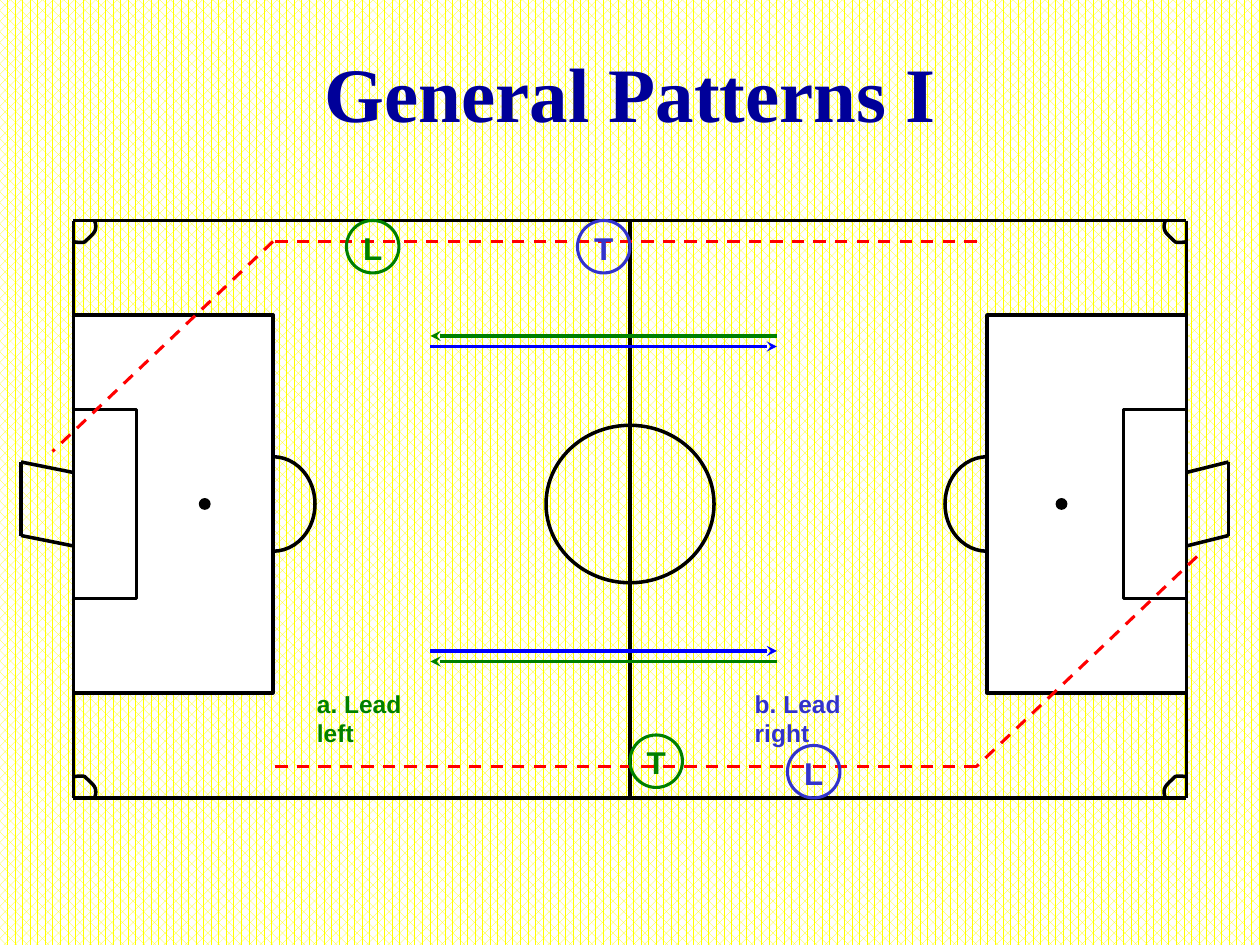
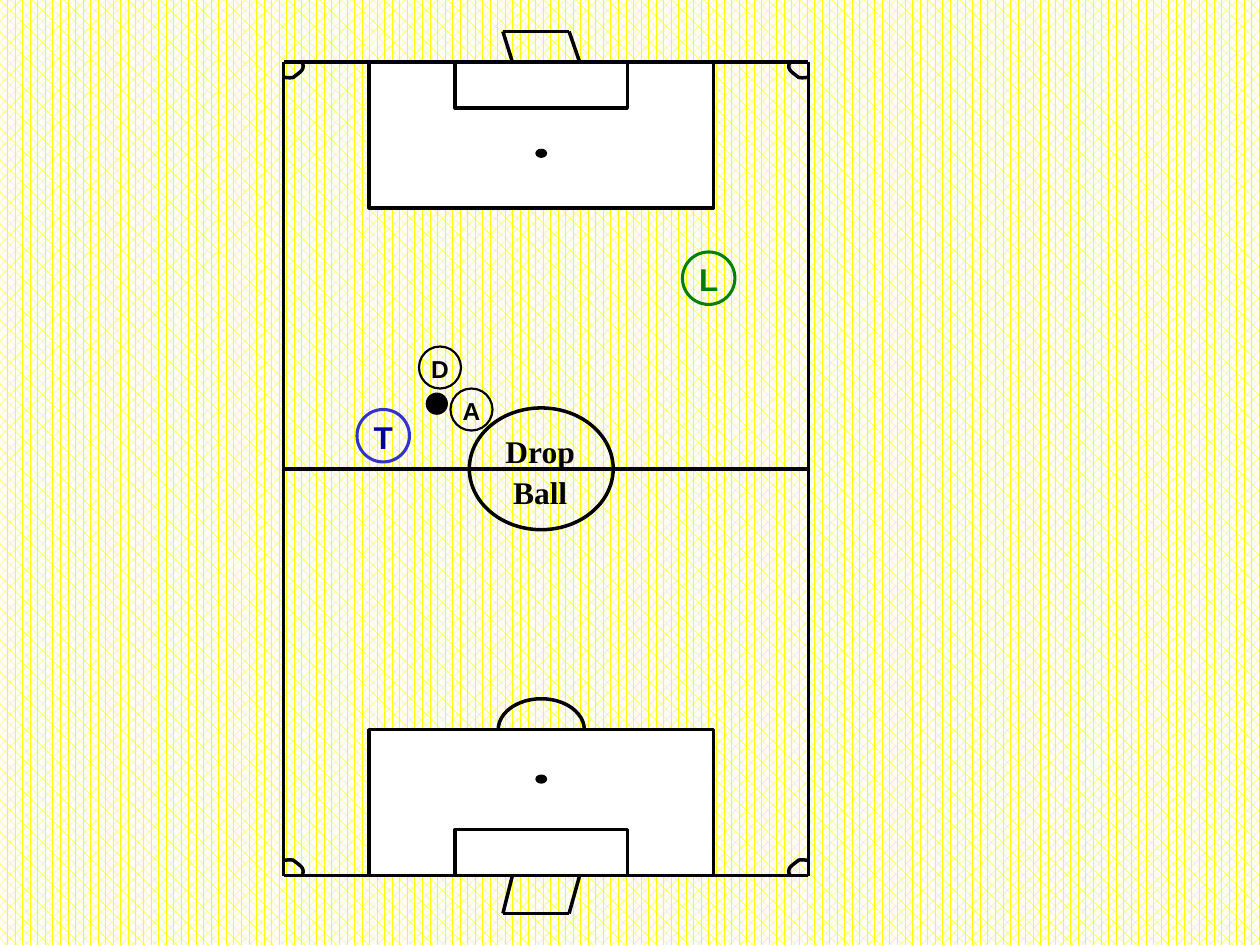
from lxml import etree
from pptx import Presentation
from pptx.dml.color import RGBColor
from pptx.enum.dml import MSO_LINE, MSO_PATTERN
from pptx.enum.shapes import MSO_CONNECTOR, MSO_SHAPE
from pptx.enum.text import PP_ALIGN
from pptx.oxml.ns import qn
from pptx.util import Inches, Pt

COLS, ROWS = 120, 90
BLACK, WHITE, YELLOW, RED = "000000", "FFFFFF", "FFFF00", "FF0000"
NAVY, INDIGO, BLUE, GREEN = "000099", "3333CC", "0000FF", "008000"
SANS, SERIF = "Arial", "Times New Roman"
FIELD_LINE, PLAY_LINE = 2, 1.75

# Corner arc as joined cubic curves, in cells inward from the corner
CORNER_ARC = [(2, 0), (2.16, 0.36), (2.16, 0.72), (2.04, 1), (1.92, 1.3),
              (1.3, 1.8), (1.08, 2.04), (0.72, 2.16), (0.24, 2.04), (0, 2.04)]


def rgb(value):
    return RGBColor.from_string(value)


def curve_points(controls, steps=8):
    """Points along the cubic Bezier curves that share their end points."""
    points = [controls[0]]
    for i in range(0, len(controls) - 1, 3):
        for n in range(1, steps + 1):
            t = n / steps
            weights = ((1 - t) ** 3, 3 * t * (1 - t) ** 2,
                       3 * t * t * (1 - t), t ** 3)
            points.append(tuple(
                sum(w * c[axis] for w, c in zip(weights, controls[i:i + 4]))
                for axis in (0, 1)))
    return points


class FieldDeck:
    """Field diagrams on a grid of 120 columns by 90 rows."""

    def __init__(self):
        self.prs = Presentation()
        self.prs.slide_width, self.prs.slide_height = Inches(10), Inches(7.5)
        self.s = None

    def x(self, col):
        return round(self.prs.slide_width * col / COLS)

    def y(self, row):
        return round(self.prs.slide_height * row / ROWS)

    def new_slide(self):
        self.s = self.prs.slides.add_slide(self.prs.slide_layouts[6])
        fill = self.s.background.fill
        fill.patterned()
        fill.pattern = MSO_PATTERN.PERCENT_60
        fill.fore_color.rgb = rgb(YELLOW)
        fill.back_color.rgb = rgb(WHITE)

    def style(self, sp, fill, color, width):
        sp.shadow.inherit = False
        if fill:
            sp.fill.solid()
            sp.fill.fore_color.rgb = rgb(fill)
        else:
            sp.fill.background()
        sp.line.color.rgb = rgb(color)
        sp.line.width = Pt(width)

    def shape(self, kind, col, row, w, h, fill=None, color=BLACK,
              width=FIELD_LINE):
        sp = self.s.shapes.add_shape(kind, self.x(col), self.y(row),
                                     self.x(w), self.y(h))
        self.style(sp, fill, color, width)

    def rect(self, *box, **look):
        self.shape(MSO_SHAPE.RECTANGLE, *box, **look)

    def ellipse(self, cx, cy, w, h, **look):
        """Ellipse placed by its centre."""
        self.shape(MSO_SHAPE.OVAL, cx - w / 2, cy - h / 2, w, h, **look)

    def dot(self, cx, cy, w=1, h=1):
        self.ellipse(cx, cy, w, h, fill=BLACK, width=0.75)

    def lines(self, *points, color=BLACK, width=FIELD_LINE, dash=False,
              arrow=False):
        """Straight lines from each point to the next."""
        for (x1, y1), (x2, y2) in zip(points, points[1:]):
            sp = self.s.shapes.add_connector(
                MSO_CONNECTOR.STRAIGHT, self.x(x1), self.y(y1),
                self.x(x2), self.y(y2))
            sp.line.color.rgb = rgb(color)
            sp.line.width = Pt(width)
            if dash:
                sp.line.dash_style = MSO_LINE.DASH
            if arrow:
                ln = sp.line._get_or_add_ln()
                etree.SubElement(ln, qn("a:tailEnd"), type="stealth")
            etree.SubElement(sp._element.spPr, qn("a:effectLst"))

    def text(self, col, row, w, h, *paragraphs, size, color, font=SANS,
             align=PP_ALIGN.CENTER, wrap=False, spacing=None, top=0.05):
        tf = self.s.shapes.add_textbox(self.x(col), self.y(row),
                                       self.x(w), self.y(h)).text_frame
        tf.word_wrap = wrap
        tf.margin_top = Inches(top)
        for i, content in enumerate(paragraphs):
            p = tf.add_paragraph() if i else tf.paragraphs[0]
            p.text = content
            p.alignment = align
            p.line_spacing = spacing
            p.font.name, p.font.size, p.font.bold = font, Pt(size), True
            p.font.color.rgb = rgb(color)

    def marker(self, letter, cx, cy, color, text_color=None, d=5,
               size=18, width=PLAY_LINE):
        """Ringed letter that stands for a person on the field."""
        self.ellipse(cx, cy, d, d, color=color, width=width)
        w, h = (4.2, 4.8) if size == 18 else (4.1, 4)
        self.text(cx - w / 2, cy - h / 2 + 0.1, w, h, letter,
                  size=size, color=text_color or color)

    def boundary(self, left, top, right, bottom, arc_x=1, arc_y=1):
        """Touch lines and goal lines with an arc in each corner."""
        self.lines((left, top), (right, top), (right, bottom),
                   (left, bottom), (left, top))
        for cx, sx in ((left, arc_x), (right, -arc_x)):
            for cy, sy in ((top, arc_y), (bottom, -arc_y)):
                points = [(self.x(cx + sx * dx), self.y(cy + sy * dy))
                          for dx, dy in curve_points(CORNER_ARC)]
                builder = self.s.shapes.build_freeform(*points[0])
                builder.add_line_segments(points[1:], close=False)
                self.style(builder.convert_to_shape(), None, BLACK, FIELD_LINE)


def general_patterns(deck):
    deck.new_slide()
    deck.text(25.2, 3, 69.7, 9, "General Patterns I", size=44, color=NAVY,
              font=SERIF, top=0.11)

    left, top, right, bottom = 7, 21, 113, 76
    middle, centre = 60, 48
    for arc_x in (26, 94):
        deck.ellipse(arc_x, centre, 8, 9)
    for box_x, area_x in ((left, left), (right - 19, right - 6)):
        deck.rect(box_x, 30, 19, 36, fill=WHITE)
        deck.rect(area_x, 39, 6, 18)
    deck.boundary(left, top, right, bottom)
    deck.lines((middle, top), (middle, bottom))
    deck.ellipse(middle, centre, 16, 15)
    for goal_line, net in ((left, 2), (right, 117)):
        deck.lines((goal_line, 45), (net, 44), (net, 51), (goal_line, 52))
    for spot_x in (19.5, 101.1):
        deck.dot(spot_x, centre)

    deck.lines((93, 23), (26, 23), (5, 43), color=RED, width=PLAY_LINE,
               dash=True)
    deck.lines((114, 53), (93, 73), (26, 73), color=RED, width=PLAY_LINE,
               dash=True)
    for color, start, end, rows in ((BLUE, 41, 74, (33, 62)),
                                    (GREEN, 74, 41, (32, 63))):
        for row in rows:
            deck.lines((start, row), (end, row), color=color,
                       width=PLAY_LINE, arrow=True)
    for letter, cx, cy, color in (("L", 77.5, 73.5, INDIGO),
                                  ("T", 57.5, 23.5, INDIGO),
                                  ("T", 62.5, 72.5, GREEN),
                                  ("L", 35.5, 23.5, GREEN)):
        deck.marker(letter, cx, cy, color)
    for label, col, w, color in (("a. Lead left", 29, 13.8, GREEN),
                                 ("b. Lead right", 70.7, 15.6, INDIGO)):
        deck.text(col, 65, w, 4, label, size=14, color=color,
                  align=PP_ALIGN.LEFT, wrap=True)


def drop_ball(deck):
    deck.new_slide()
    left, top, right, bottom = 27, 5.9, 77, 83.4
    middle, halfway = 51.55, 44.65
    box_w, box_h, area_w, area_h = 32.8, 13.9, 16.4, 4.4

    deck.ellipse(middle, 69.5, 8.2, 5.9)
    for box_y, area_y in ((top, top), (bottom - box_h, bottom - area_h)):
        deck.rect(middle - box_w / 2, box_y, box_w, box_h, fill=WHITE)
        deck.rect(middle - area_w / 2, area_y, area_w, area_h)
    deck.boundary(left, top, right, bottom, arc_x=0.88, arc_y=0.72)
    deck.lines((left, halfway), (right, halfway))
    deck.ellipse(middle, halfway, 13.7, 11.6)
    for goal_line, net in ((top, 3), (bottom, 87)):
        deck.lines((48.8, goal_line), (47.9, net), (54.2, net),
                   (55.2, goal_line))
    for spot_y in (14.6, 74.2):
        deck.dot(middle, spot_y, 1, 0.75)

    deck.marker("L", 67.5, 26.5, GREEN)
    deck.marker("T", 36.5, 41.5, INDIGO, text_color=NAVY)
    deck.dot(41.6, 38.45, 2, 2)
    for letter, cx, cy in (("A", 44.9, 39), ("D", 41.9, 35)):
        deck.marker(letter, cx, cy, BLACK, d=4, size=14, width=1.25)
    deck.text(46.9, 40.2, 9.1, 8.4, "Drop", "Ball", size=18, color=BLACK,
              font=SERIF, spacing=1.09)


def main():
    deck = FieldDeck()
    general_patterns(deck)
    drop_ball(deck)
    deck.prs.save("out.pptx")


if __name__ == "__main__":
    main()
